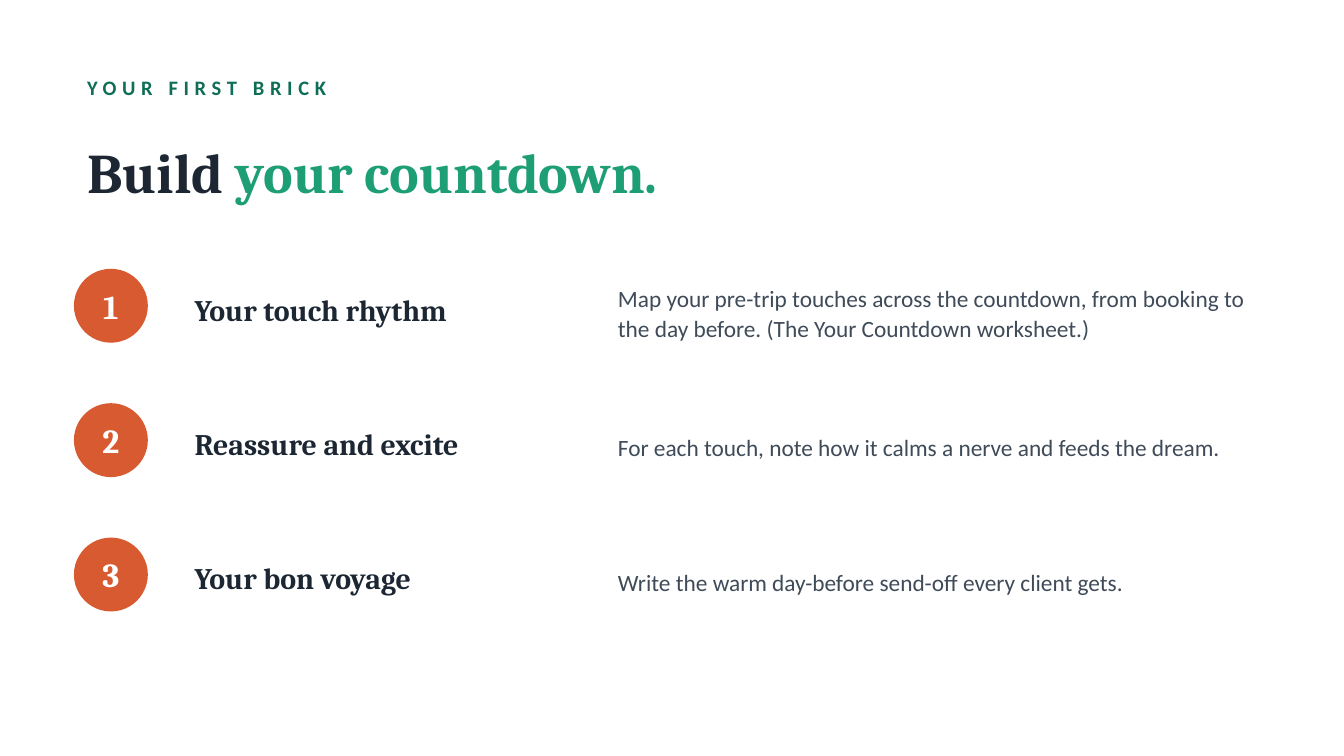
"""Build the three-step countdown slide."""
from pptx import Presentation
from pptx.dml.color import RGBColor
from pptx.enum.shapes import MSO_SHAPE
from pptx.enum.text import MSO_ANCHOR, MSO_AUTO_SIZE, PP_ALIGN
from pptx.util import Inches, Pt

KICKER = "YOUR FIRST BRICK"
TITLE = [("Build ", "ink"), ("your countdown.", "green")]
STEPS = [
    ("Your touch rhythm",
     "Map your pre-trip touches across the countdown, from booking to the day before. "
     "(The Your Countdown worksheet.)"),
    ("Reassure and excite",
     "For each touch, note how it calms a nerve and feeds the dream."),
    ("Your bon voyage",
     "Write the warm day-before send-off every client gets."),
]
COLORS = {
    "white": "FFFFFF", "ink": "1C2733", "green": "1D9E75",
    "dark_green": "0F6E56", "orange": "D85A30", "slate": "3F4B59",
}
HEADING_FONT, BODY_FONT = "Cambria", "Calibri"
WIDTH = 10
HEIGHT = WIDTH * 9 / 16
MARGIN = 0.55
CONTENT_WIDTH = WIDTH - 2 * MARGIN
NAME_LEFT, DETAIL_LEFT = 1.35, 4.5
FIRST_ROW, ROW_PITCH = 2, 1
BADGE_SIZE = 0.55
ROW_LIFT = 0.05


def color(name):
    return RGBColor.from_string(COLORS[name])


def write(shape, spans, size, font, bold=True, align=PP_ALIGN.LEFT):
    frame = shape.text_frame
    frame.word_wrap = True
    frame.auto_size = MSO_AUTO_SIZE.NONE
    frame.vertical_anchor = MSO_ANCHOR.MIDDLE
    para = frame.paragraphs[0]
    para.alignment = align
    for text, tone in spans:
        span = para.add_run()
        span.text = text
        span.font.name = font
        span.font.size = Pt(size)
        span.font.bold = bold
        span.font.color.rgb = color(tone)
    return para


def add_text(slide, area, text, tone, size, font, bold=True):
    box = slide.shapes.add_textbox(*map(Inches, area))
    return write(box, [(text, tone)], size, font, bold)


def add_badge(slide, top, number):
    badge = slide.shapes.add_shape(
        MSO_SHAPE.OVAL, *map(Inches, (MARGIN, top, BADGE_SIZE, BADGE_SIZE)))
    badge.shadow.inherit = False
    badge.fill.solid()
    badge.fill.fore_color.rgb = color("orange")
    badge.line.fill.background()
    frame = badge.text_frame
    frame.margin_left = frame.margin_right = frame.margin_top = frame.margin_bottom = 0
    write(badge, [(str(number), "white")], 18, HEADING_FONT, align=PP_ALIGN.CENTER)


def main():
    deck = Presentation()
    deck.slide_width, deck.slide_height = Inches(WIDTH), Inches(HEIGHT)
    slide = deck.slides.add_slide(deck.slide_layouts[5])
    slide.background.fill.solid()
    slide.background.fill.fore_color.rgb = color("white")

    kicker = add_text(slide, (MARGIN, 0.5, CONTENT_WIDTH, 0.3),
                      KICKER, "dark_green", 11, BODY_FONT)
    kicker.runs[0].font._element.set("spc", "300")

    title = slide.shapes.title
    title.left, title.top, title.width, title.height = map(
        Inches, (MARGIN, 0.85, CONTENT_WIDTH, 0.85))
    write(title, TITLE, 30, HEADING_FONT)

    for index, (name, detail) in enumerate(STEPS):
        top = FIRST_ROW + index * ROW_PITCH
        add_badge(slide, top, index + 1)
        add_text(slide, (NAME_LEFT, top - ROW_LIFT, 3, 0.7),
                 name, "ink", 16, HEADING_FONT)
        para = add_text(slide, (DETAIL_LEFT, top - ROW_LIFT, 5, 0.75),
                        detail, "slate", 12.5, BODY_FONT, bold=False)
        para.line_spacing = 1.05

    deck.save("out.pptx")


if __name__ == "__main__":
    main()
